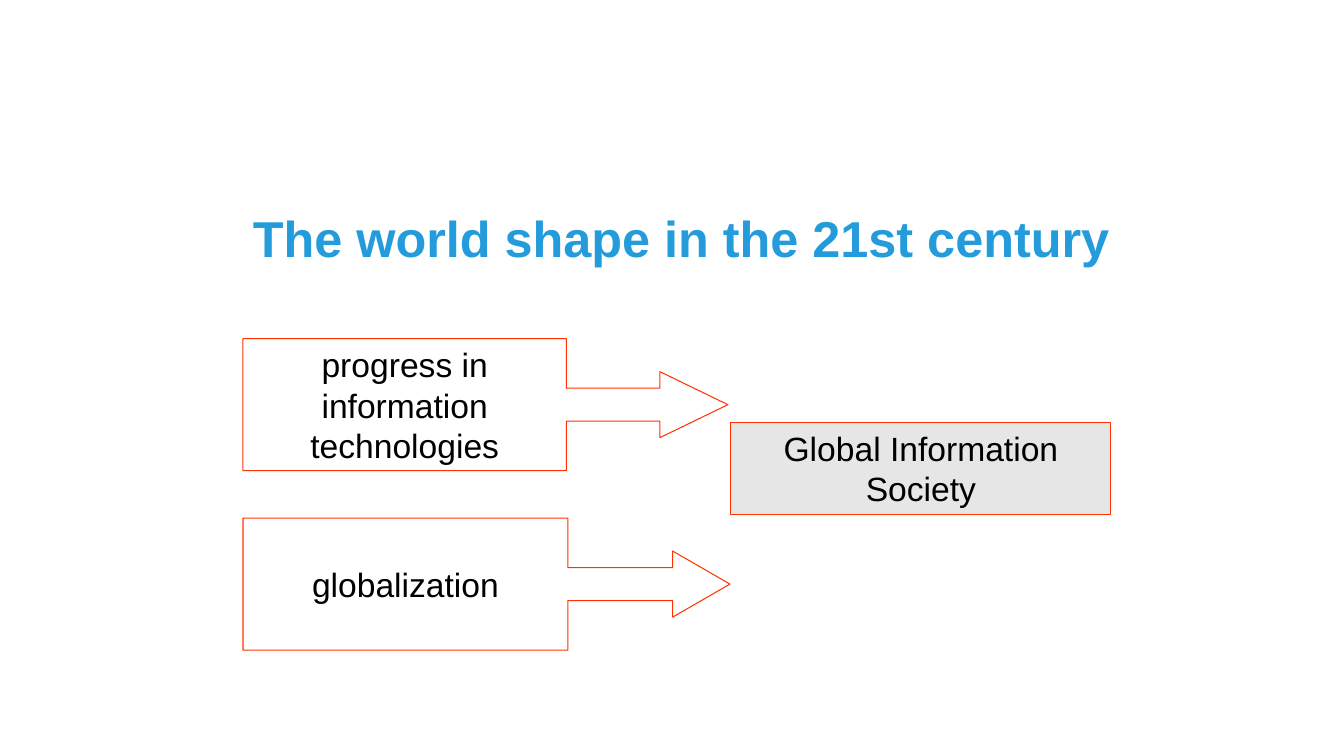
from pptx import Presentation
from pptx.dml.color import RGBColor
from pptx.enum.shapes import MSO_SHAPE
from pptx.enum.text import MSO_ANCHOR, PP_ALIGN
from pptx.util import Inches, Pt

# Content: positions are percentages of the slide's width and height
LEFT_EDGE = 18.08
TITLE = {"text": "The world shape in the 21st century",
         "area": (LEFT_EDGE, 22.27, 75, 19.33)}
CALLOUT_TOP, CALLOUT_PITCH, CALLOUT_HEIGHT = 44.8, 23.73, 17.47
# Text, width, length of the arrowhead
CAUSES = [
    ("progress in information technologies", 36.08, 0.515),
    ("globalization", 36.23, 0.433),
]
RESULT = {"text": "Global Information Society",
          "area": (54.38, 55.87, 28.28, 12.13)}

# Theme
THEME = {
    "title": {"name": "Arial", "size": Pt(36), "bold": True},
    "body": {"name": "Arial", "size": Pt(24), "bold": False},
    "title_color": RGBColor.from_string("249CDC"),
    "body_color": RGBColor.from_string("000000"),
    "outline": RGBColor.from_string("FF3300"),
    "panel": RGBColor.from_string("E7E6E6"),
}

presentation = Presentation()
presentation.slide_width, presentation.slide_height = Inches(13.33), Inches(7.5)
slide = presentation.slides.add_slide(presentation.slide_layouts[6])


def place(area):
    """Turn percentages into left, top, width and height."""
    sides = (presentation.slide_width, presentation.slide_height) * 2
    return [round(side * share / 100) for side, share in zip(sides, area)]


def write(shape, text, style, alignment):
    frame = shape.text_frame
    frame.word_wrap = True
    frame.vertical_anchor = MSO_ANCHOR.MIDDLE
    paragraph = frame.paragraphs[0]
    paragraph.text = text
    paragraph.alignment = alignment
    for attribute, value in THEME[style].items():
        setattr(paragraph.font, attribute, value)
    paragraph.font.color.rgb = THEME[f"{style}_color"]
    return paragraph


def add_box(kind, text, area, fill=None):
    shape = slide.shapes.add_shape(kind, *place(area))
    shape.shadow.inherit = False
    if fill is None:
        shape.fill.background()
    else:
        shape.fill.solid()
        shape.fill.fore_color.rgb = fill
    shape.line.color.rgb = THEME["outline"]
    shape.line.width = Pt(0.75)
    write(shape, text, "body", PP_ALIGN.CENTER)
    return shape


# Title
title = slide.shapes.add_textbox(*place(TITLE["area"]))
write(title, TITLE["text"], "title", PP_ALIGN.LEFT).line_spacing = 0.9

# Causes, each pointing to the right
for row, (text, width, head_length) in enumerate(CAUSES):
    top = CALLOUT_TOP + row * CALLOUT_PITCH
    callout = add_box(MSO_SHAPE.RIGHT_ARROW_CALLOUT, text,
                      (LEFT_EDGE, top, width, CALLOUT_HEIGHT))
    for index, value in enumerate((0.25, 0.25, head_length, 0.667)):
        callout.adjustments[index] = value

# Result
add_box(MSO_SHAPE.RECTANGLE, RESULT["text"], RESULT["area"], THEME["panel"])

presentation.save("out.pptx")
